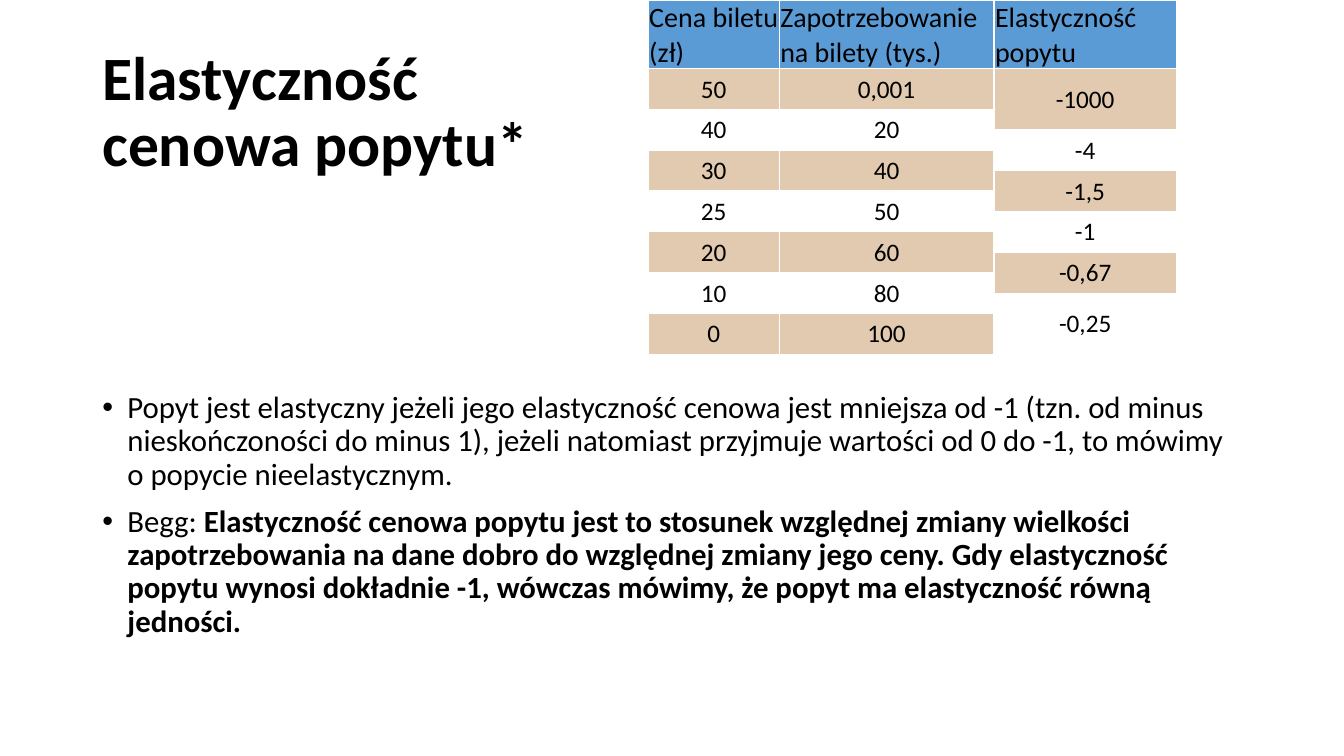
from pptx import Presentation, util as u
from pptx.dml.color import RGBColor
from pptx.enum import text as t
from pptx.oxml import parse_xml
from pptx.oxml.ns import nsdecls

Pt = u.Pt
FONT = "Calibri"
HUES = {"ink": "000000", "head": "5B9BD5", "band": "E2CAB0", "plain": "FFFFFF"}
HEADS = ["Cena biletu (zł)", "Zapotrzebowanie \nna bilety (tys.)", "Elastyczność popytu"]
COSTS = ["50", "40", "30", "25", "20", "10", "0"]
SALES = ["0,001", "20", "40", "50", "60", "80", "100"]
RATES = ["-1000", "-4", "-1,5", "-1", "-0,67", "-0,25"]
NOTES = [
    [("Popyt jest elastyczny jeżeli jego elastyczność cenowa jest mniejsza od -1 "
      "(tzn. od minus nieskończoności do minus 1), jeżeli natomiast przyjmuje "
      "wartości od 0 do -1, to mówimy o popycie nieelastycznym.", False)],
    [("Begg: ", False),
     ("Elastyczność cenowa popytu jest to stosunek względnej zmiany wielkości "
      "zapotrzebowania na dane dobro do względnej zmiany jego ceny. Gdy elastyczność "
      "popytu wynosi dokładnie -1, wówczas mówimy, że popyt ma elastyczność równą "
      "jedności.", True)],
]


def hue(name):
    """Return the named colour."""
    return RGBColor.from_string(HUES[name])


def add_run(para, words, size, bold=False):
    """Add styled words to a paragraph, breaking lines at newlines."""
    for i, line in enumerate(words.split("\n")):
        if i:
            para.add_line_break()
        run = para.add_run()
        run.text = line
        font = run.font
        font.name, font.size, font.bold = FONT, Pt(size), bold
        font.color.rgb = hue("ink")


def add_box(slide, box):
    """Add a wrapping text box and return its frame."""
    frame = slide.shapes.add_textbox(*map(Pt, box)).text_frame
    frame.word_wrap = True
    return frame


def add_title(slide, box):
    """Place the heading, centred vertically in its box."""
    frame = add_box(slide, box)
    frame.vertical_anchor = t.MSO_ANCHOR.MIDDLE
    para = frame.paragraphs[0]
    para.line_spacing = 0.9
    add_run(para, "Elastyczność\ncenowa popytu*", 44, True)


def add_notes(slide, box):
    """Place the bulleted notes below a blank band in the box."""
    frame = add_box(slide, box)
    frame.margin_top = Pt(38)
    for i, runs in enumerate(NOTES):
        para = frame.add_paragraph() if i else frame.paragraphs[0]
        para.line_spacing = 0.9
        para.space_before = Pt(10 if i else 0)
        props = para._p.get_or_add_pPr()
        props.set("marL", str(Pt(18)))
        props.set("indent", str(-Pt(18)))
        props.append(parse_xml(f'<a:buFont {nsdecls("a")} typeface="Arial"/>'))
        props.append(parse_xml(f'<a:buChar {nsdecls("a")} char="•"/>'))
        for words, bold in runs:
            add_run(para, words, 22, bold)


def fill_cell(cell, words, size, tone, align):
    """Write one table cell."""
    cell.fill.solid()
    cell.fill.fore_color.rgb = hue(tone)
    cell.vertical_anchor = t.MSO_ANCHOR.MIDDLE
    cell.margin_left = cell.margin_top = cell.margin_right = Pt(0.75)
    cell.margin_bottom = 0
    para = cell.text_frame.paragraphs[0]
    para.alignment = align
    add_run(para, words, size)


def add_grid(slide, box):
    """Place the price table, its last column staggered by half a step."""
    wides = [93.6, 153.4, 130.3]
    highs = [49, 29] + [14.6] * 10 + [29]
    grid = slide.shapes.add_table(len(highs), len(wides), *map(Pt, box)).table
    for col, wide in zip(grid.columns, wides):
        col.width = Pt(wide)
    for row, high in zip(grid.rows, highs):
        row.height = Pt(high)
    for c, head in enumerate(HEADS):
        fill_cell(grid.cell(0, c), head, 20, "head", t.PP_ALIGN.LEFT)
    last = len(highs) - 1
    for c, (vals, start) in enumerate([(COSTS, 0), (SALES, 0), (RATES, 1)]):
        for i, val in enumerate(vals):
            top, end = max(1, start + 2 * i), min(last, start + 2 * i + 1)
            cell = grid.cell(top, c)
            if end > top:
                cell.merge(grid.cell(end, c))
            tone = "plain" if i % 2 else "band"
            fill_cell(cell, val, 18, tone, t.PP_ALIGN.CENTER)


def main():
    """Build and save the slide."""
    deck = Presentation()
    deck.slide_width, deck.slide_height = Pt(960), Pt(540)
    slide = deck.slides.add_slide(deck.slide_layouts[6])
    add_title(slide, (66, 28.75, 828, 104.4))
    add_notes(slide, (66, 242, 828, 235.4))
    add_grid(slide, (463, 0, 377.3, 253))
    deck.save("out.pptx")


if __name__ == "__main__":
    main()
